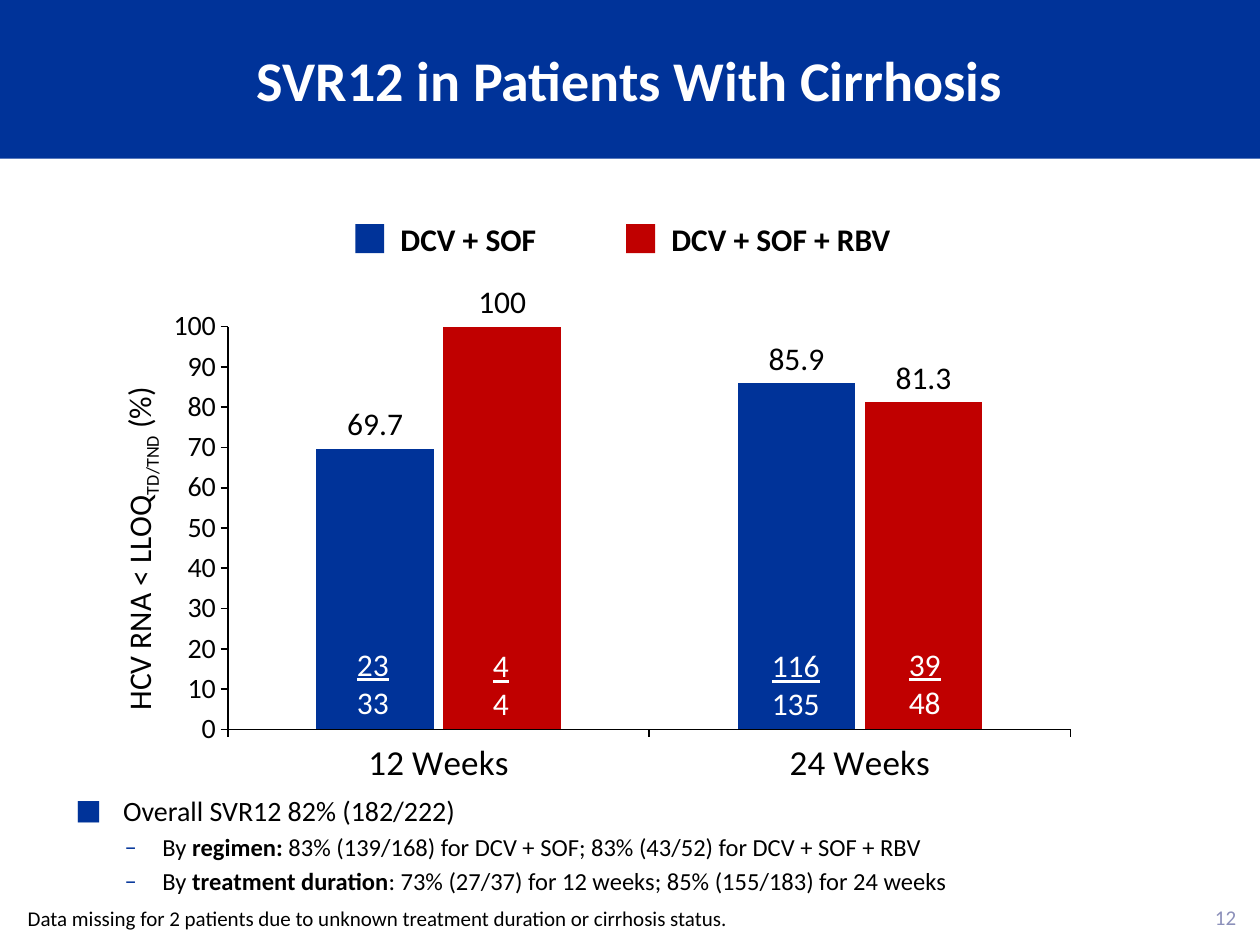
from lxml import etree
from pptx import Presentation
from pptx.chart.data import CategoryChartData
from pptx.dml.color import RGBColor
from pptx.enum.chart import XL_CHART_TYPE, XL_LABEL_POSITION, XL_TICK_MARK
from pptx.enum.shapes import MSO_SHAPE
from pptx.enum.text import MSO_ANCHOR, PP_ALIGN
from pptx.oxml import parse_xml
from pptx.oxml.ns import nsdecls, qn
from pptx.util import Inches, Pt

COLUMNS = XL_CHART_TYPE.COLUMN_CLUSTERED
OUTSIDE_END = XL_LABEL_POSITION.OUTSIDE_END
TICK_OUT, TICK_NONE = XL_TICK_MARK.OUTSIDE, XL_TICK_MARK.NONE
RECTANGLE = MSO_SHAPE.RECTANGLE
TOP, MIDDLE, BOTTOM = MSO_ANCHOR.TOP, MSO_ANCHOR.MIDDLE, MSO_ANCHOR.BOTTOM
LEFT, CENTER, RIGHT = PP_ALIGN.LEFT, PP_ALIGN.CENTER, PP_ALIGN.RIGHT

FONT = "Calibri"
BLUE, RED, BLACK, WHITE, GREY = "003399", "C00000", "000000", "FFFFFF", "8C90BA"


def rgb(value):
    return RGBColor.from_string(value)


def paint(fill, color):
    fill.solid()
    fill.fore_color.rgb = rgb(color)


def style_font(font, size, color=BLACK, bold=False, underline=False):
    font.name, font.size, font.bold = FONT, Pt(size), bold
    font.color.rgb = rgb(color)
    if underline:
        font.underline = True


def write(frame, paragraphs, align=LEFT, anchor=TOP, wrap=True, inset=None, **style):
    frame.word_wrap = wrap
    frame.vertical_anchor = anchor
    if inset is not None:
        frame.margin_left = frame.margin_right = Inches(inset)
        frame.margin_top = frame.margin_bottom = Inches(inset)
    for index, runs in enumerate(paragraphs):
        paragraph = frame.add_paragraph() if index else frame.paragraphs[0]
        paragraph.alignment = align
        for text, changes in runs:
            run = paragraph.add_run()
            run.text = text
            style_font(run.font, **{**style, **changes})
    return frame.paragraphs


def add_text(slide, box, paragraphs, **style):
    frame = slide.shapes.add_textbox(*map(Inches, box)).text_frame
    return write(frame, paragraphs, **style)


def add_title(slide, box, text):
    title = slide.shapes.title
    title.left, title.top, title.width, title.height = map(Inches, box)
    paint(title.fill, BLUE)
    write(title.text_frame, [[(text, {})]], align=CENTER, anchor=MIDDLE,
          size=32, color=WHITE, bold=True)


def add_legend(slide, box, entries):
    left, top, width, height = box
    swatch = 0.23
    for offset, label_width, label, color in entries:
        marker = slide.shapes.add_shape(
            RECTANGLE, Inches(left + offset), Inches(top + 0.08),
            Inches(swatch), Inches(swatch))
        paint(marker.fill, color)
        marker.line.fill.background()
        marker.shadow.inherit = False
        add_text(slide, (left + offset + 0.26, top, label_width, height),
                 [[(label, {})]], wrap=False, size=18, bold=True)


def manual_layout(**values):
    inner = '<c:layoutTarget val="inner"/>' if "w" in values else ""
    modes = "".join(f'<c:{key}Mode val="edge"/>' for key in "xy")
    sizes = "".join(f'<c:{key} val="{value}"/>' for key, value in values.items())
    return parse_xml(f'<c:layout {nsdecls("c")}><c:manualLayout>'
                     f'{inner}{modes}{sizes}</c:manualLayout></c:layout>')


def set_layout(parent, layout, position):
    for old in parent.findall(qn("c:layout")):
        parent.remove(old)
    parent.insert(position, layout)


def style_axis(axis, size):
    axis.has_major_gridlines = False
    axis.major_tick_mark, axis.minor_tick_mark = TICK_OUT, TICK_NONE
    style_font(axis.tick_labels.font, size)
    axis.format.line.color.rgb = rgb(BLACK)
    axis.format.line.width = Pt(1)


def add_response_chart(slide, box):
    data = CategoryChartData()
    data.categories = ["12 Weeks", "24 Weeks"]
    data.add_series("DCV + SOF", [69.7, 85.9])
    data.add_series("DCV + SOF + RBV", [100, 81.3])
    chart = slide.shapes.add_chart(COLUMNS, *map(Inches, box), data).chart
    chart.has_legend = chart.has_title = False
    style_font(chart.font, 18)

    plot = chart.plots[0]
    plot.gap_width, plot.overlap, plot.vary_by_categories = 150, -8, False
    formats = ((BLUE, "#,##0.0"), (RED, "General"))
    for series, (color, number_format) in zip(plot.series, formats):
        paint(series.format.fill, color)
        series.invert_if_negative = False
        labels = series.data_labels
        labels.show_value, labels.position = True, OUTSIDE_END
        labels.number_format, labels.number_format_is_linked = number_format, False
        style_font(labels.font, 18)

    style_axis(chart.category_axis, 20)
    percent = chart.value_axis
    style_axis(percent, 16)
    percent.minimum_scale, percent.maximum_scale, percent.major_unit = 0, 100, 10
    percent.tick_labels.number_format = "General"
    percent.tick_labels.number_format_is_linked = False
    heading = percent.axis_title
    caption = write_axis_title(heading.text_frame)
    caption.runs[1].font._element.set("baseline", "-25000")
    set_layout(heading._element, manual_layout(x=0.01, y=0.18), 1)
    set_layout(chart._chartSpace.chart.plotArea,
               manual_layout(x=0.125, y=0.077, w=0.853, h=0.731), 0)


def write_axis_title(frame):
    caption = frame.paragraphs[0]
    for text in ("HCV RNA < LLOQ", "TD/TND", " (%)"):
        run = caption.add_run()
        run.text = text
        style_font(run.font, 18)
    frame._txBody.find(qn("a:bodyPr")).set("rot", "-5400000")
    frame._txBody.find(qn("a:bodyPr")).set("vert", "horz")
    return caption


def add_patient_counts(slide, counts):
    for left, top, width, responders, total in counts:
        add_text(slide, (left, top, width, 0.71),
                 [[(responders, {"underline": True})], [(total, {})]],
                 align=CENTER, wrap=False, size=18, color=WHITE)


def set_bullet(paragraph, mark, margin, hanging, level):
    paragraph.level = level
    properties = paragraph._p.get_or_add_pPr()
    properties.set("marL", str(Inches(margin)))
    properties.set("indent", str(-Inches(hanging)))
    color = etree.SubElement(properties, qn("a:buClr"))
    etree.SubElement(color, qn("a:srgbClr")).set("val", BLUE)
    etree.SubElement(properties, qn("a:buFont")).set("typeface", FONT)
    etree.SubElement(properties, qn("a:buChar")).set("char", mark)


def add_summary(slide, box):
    small, strong = {"size": 14}, {"size": 14, "bold": True}
    paragraphs = add_text(slide, box, [
        [("Overall SVR12 82% (182/222)", {})],
        [("By ", small), ("regimen:", strong),
         (" 83% (139/168) for DCV + SOF; 83% (43/52) for DCV + SOF + RBV", small)],
        [("By ", small), ("treatment duration", strong),
         (": 73% (27/37) for 12 weeks; 85% (155/183) for 24 weeks", small)],
    ], size=16)
    for index, paragraph in enumerate(paragraphs):
        paragraph.space_before = Pt(2.8 if index else 3.2)
        bullet = ("–", 0.69, 0.3, 1) if index else ("■", 0.38, 0.38, 0)
        set_bullet(paragraph, *bullet)


def main():
    deck = Presentation()
    deck.slide_width, deck.slide_height = Inches(10), Inches(7.5)
    slide = deck.slides.add_slide(deck.slide_layouts[5])
    add_title(slide, (0, 0, 10, 1.26), "SVR12 in Patients With Cirrhosis")
    add_text(slide, (9.54, 7.13, 0.37, 0.3), [[("12", {})]], align=RIGHT,
             anchor=MIDDLE, wrap=False, size=12, color=GREY)
    add_response_chart(slide, (0.83, 2.25, 7.84, 4.38))
    add_patient_counts(slide, [
        (2.73, 5.07, 0.46, "23", "33"), (3.81, 5.08, 0.33, "4", "4"),
        (6.02, 5.08, 0.59, "116", "135"), (7.11, 5.07, 0.46, "39", "48")])
    add_legend(slide, (2.82, 1.7, 4.36, 0.4), [
        (0, 1.29, "DCV + SOF", BLUE), (2.15, 1.96, "DCV + SOF + RBV", RED)])
    add_summary(slide, (0.5, 6.25, 9.17, 0.97))
    add_text(slide, (0.22, 7.19, 9.56, 0.2), [[(
        "Data missing for 2 patients due to unknown treatment duration or cirrhosis status.",
        {})]], anchor=BOTTOM, inset=0, size=12)
    deck.save("out.pptx")


if __name__ == "__main__":
    main()
